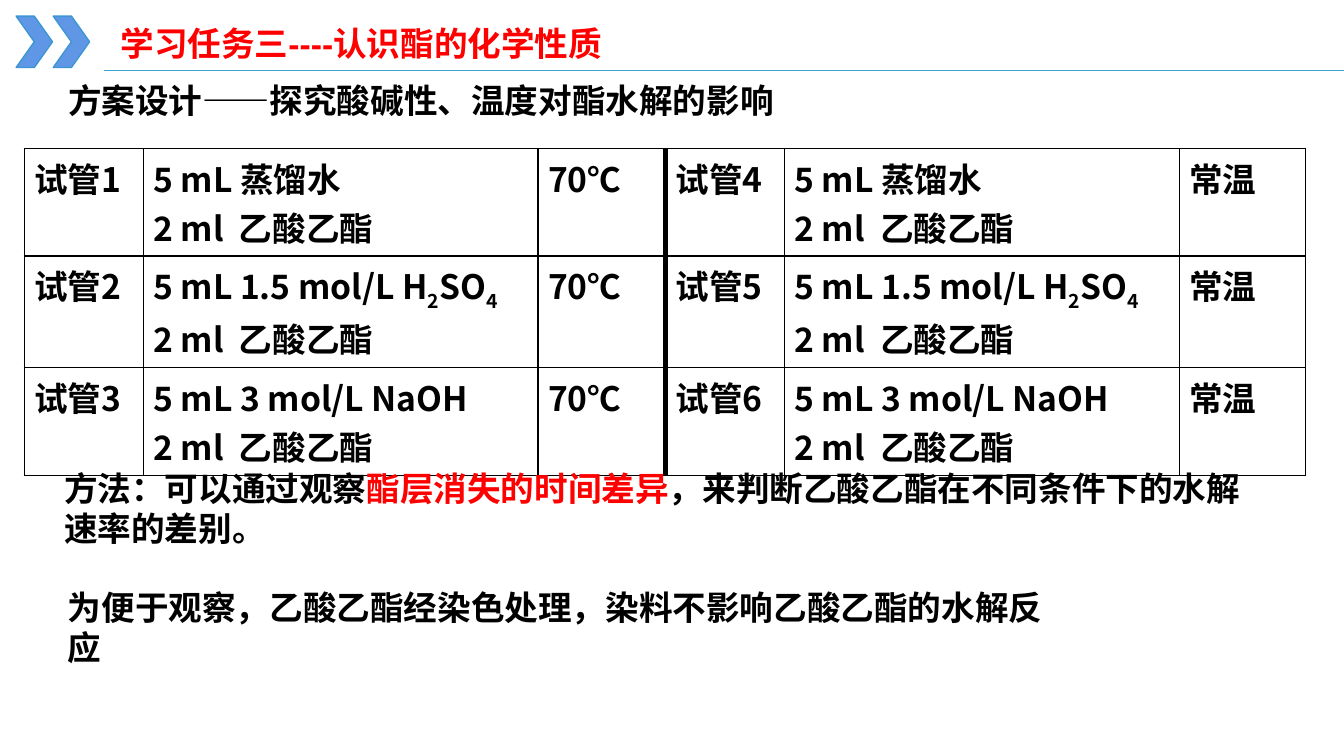
import pptx
import pptx.dml.color
import pptx.enum.shapes
import pptx.enum.text
import pptx.oxml.ns
import pptx.util
from lxml import etree

Pt = pptx.util.Pt
qn = pptx.oxml.ns.qn

SANS, ARIAL, SERIF = "Noto Sans CJK SC", "Arial", "Times New Roman"
BLACK, RED = "000000", "FF0000"
BASE_FORMAT = {"size": Pt(24), "bold": True, "name": SANS}

SOLUTIONS = [
    [("5 mL 蒸馏水", {})],
    [("5 mL 1.5 mol/L H", {}), ("2", {"baseline": -25}),
     ("SO", {}), ("4", {"baseline": -25})],
    [("5 mL 3 mol/L NaOH", {})],
]
ESTER = [("2 ml  乙酸乙酯", {})]
COLUMN_WIDTHS = [85, 282, 91, 85, 282, 90]
ROW_HEIGHT = 67
THIN, THICK = 1, 4.5


def color(value):
    return pptx.dml.color.RGBColor.from_string(value)


def add_span(para, text, changes):
    """Add a run; changes may hold name, color and baseline."""
    span = para.add_run()
    span.text = text
    values = {**BASE_FORMAT, **changes}
    span.font.color.rgb = color(values.pop("color", BLACK))
    baseline = values.pop("baseline", 0)
    for key, value in values.items():
        setattr(span.font, key, value)
    properties = span.font._element
    if baseline:
        properties.set("baseline", str(baseline * 1000))
    etree.SubElement(properties, qn("a:ea"), typeface=SANS)


def fill_frame(frame, paragraphs):
    for index, spans in enumerate(paragraphs):
        para = frame.paragraphs[0] if index == 0 else frame.add_paragraph()
        for text, changes in spans:
            add_span(para, text, changes)


def add_text(page, place, spans, **frame_format):
    box = page.shapes.add_textbox(*map(Pt, place))
    frame = box.text_frame
    values = {"word_wrap": True,
              "auto_size": pptx.enum.text.MSO_AUTO_SIZE.SHAPE_TO_FIT_TEXT,
              **frame_format}
    for key, value in values.items():
        setattr(frame, key, value)
    fill_frame(frame, [spans])


def add_chevron(page, left):
    shape = page.shapes.add_shape(
        pptx.enum.shapes.MSO_SHAPE.CHEVRON, Pt(left), Pt(11.5), Pt(26), Pt(36.7))
    shape.shadow.inherit = False
    shape.fill.solid()
    shape.fill.fore_color.rgb = color("6096E6")
    shape.line.color.rgb = color("3B96D3")
    shape.line.width = Pt(1)


def add_rule(page, left, right, top):
    rule = page.shapes.add_connector(
        pptx.enum.shapes.MSO_CONNECTOR.STRAIGHT, Pt(left), Pt(top), Pt(right), Pt(top))
    rule.line.color.rgb = color("3DA1D2")
    rule.line.width = Pt(0.5)
    etree.SubElement(rule._element.spPr, qn("a:effectLst"))


def set_borders(cell, widths):
    """Draw the borders; the lines come before the fill in the cell's XML."""
    properties = cell._tc.get_or_add_tcPr()
    for side in "LRTB":
        line = etree.SubElement(properties, qn(f"a:ln{side}"),
                                w=str(Pt(widths.get(side, THIN))))
        fill = etree.SubElement(line, qn("a:solidFill"))
        etree.SubElement(fill, qn("a:srgbClr"), val=BLACK)
    cell.fill.background()


def add_tube_table(page, left, top):
    rows, columns = len(SOLUTIONS), len(COLUMN_WIDTHS)
    table = page.shapes.add_table(
        rows, columns, Pt(left), Pt(top),
        Pt(sum(COLUMN_WIDTHS)), Pt(ROW_HEIGHT * rows)).table
    for flag in ("first_row", "horz_banding"):
        setattr(table, flag, False)
    for column, width in zip(table.columns, COLUMN_WIDTHS):
        column.width = Pt(width)
    for row_index, solution in enumerate(SOLUTIONS):
        table.rows[row_index].height = Pt(ROW_HEIGHT)
        # Each row holds a heated tube and its room-temperature partner
        contents = []
        for first_tube, temperature, font in ((1, "70℃", SANS), (4, "常温", ARIAL)):
            contents += [
                [[(f"试管{first_tube + row_index}", {})]],
                [solution, ESTER],
                [[(temperature, {"name": font})]],
            ]
        for column_index, paragraphs in enumerate(contents):
            cell = table.cell(row_index, column_index)
            fill_frame(cell.text_frame, paragraphs)
            set_borders(cell, {2: {"R": THICK}, 3: {"L": THICK}}.get(column_index, {}))


def main():
    deck = pptx.Presentation()
    deck.slide_width, deck.slide_height = Pt(960), Pt(540)
    page = deck.slides.add_slide(deck.slide_layouts[6])

    # Header
    for left in (11.5, 38):
        add_chevron(page, left)
    add_rule(page, 74, 960, 50.4)

    # Test tubes
    add_tube_table(page, 17.3, 106)

    # Plan, method and note
    add_text(page, (41.5, 53.3, 522, 36),
             [("方案设计——探究酸碱性、温度对酯水解的影响", {})], word_wrap=False)
    margins = {f"margin_{side}": Pt(4.3) for side in ("left", "right", "top", "bottom")}
    add_text(page, (41.5, 324, 870, 78),
             [("方法：可以通过观察", {}),
              ("酯层消失的时间差异", {"color": RED}),
              ("，来判断乙酸乙酯在不同条件下的水解速率的差别。", {})],
             vertical_anchor=pptx.enum.text.MSO_ANCHOR.MIDDLE, **margins)
    add_text(page, (41.5, 415.4, 734, 36),
             [("为便于观察，", {}),
              ("乙酸乙酯经染色处理，染料不影响乙酸乙酯的水解反应", {"name": SERIF})],
             word_wrap=False)

    # Title
    add_text(page, (79, 13, 377, 36),
             [("学习任务三----认识酯的化学性质", {"name": ARIAL, "color": RED})])

    deck.save("out.pptx")


if __name__ == "__main__":
    main()
